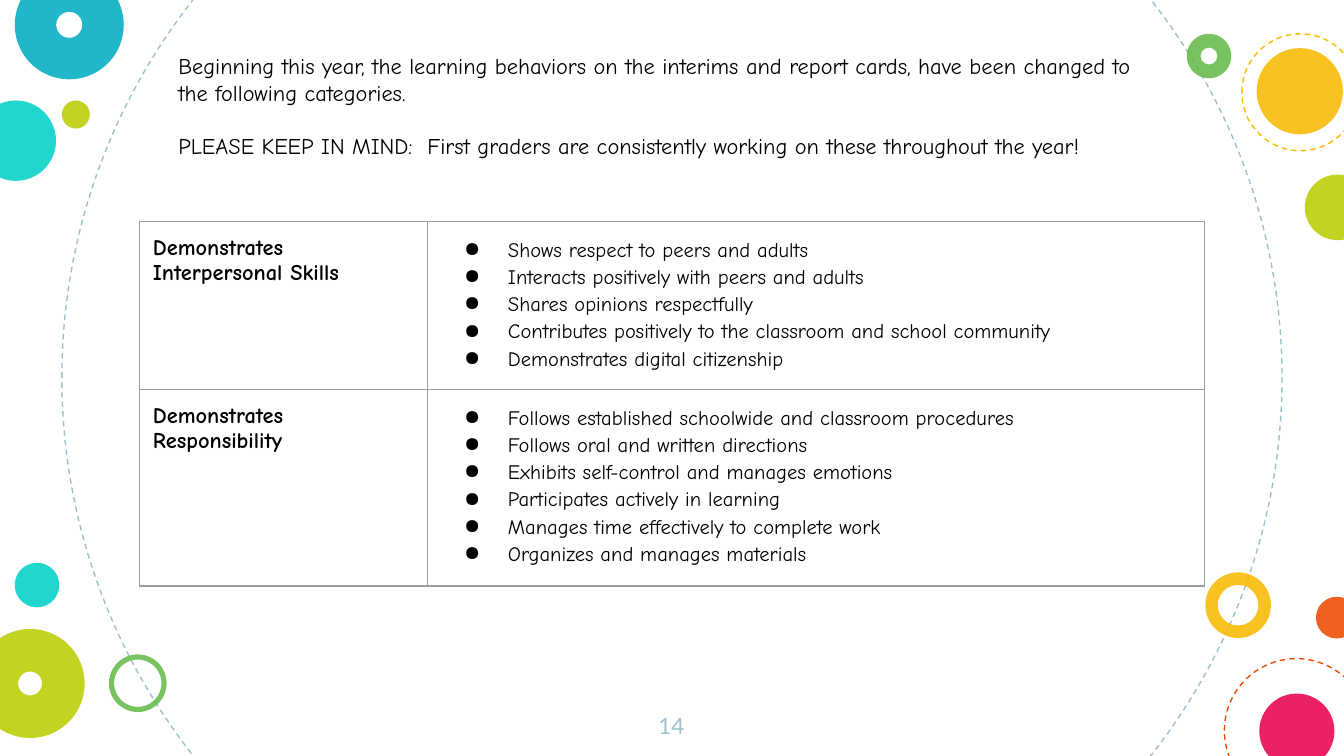
"""Builds the slide on first-grade learning behavior categories."""
from dataclasses import dataclass

from lxml.etree import SubElement
from pptx import Presentation
from pptx.dml.color import RGBColor as RGB
from pptx.enum.dml import MSO_LINE_DASH_STYLE as Dash
from pptx.enum.shapes import MSO_SHAPE as Shape
from pptx.enum.text import PP_ALIGN as Align
from pptx.oxml.ns import qn
from pptx.util import Cm, Pt


@dataclass(frozen=True)
class Theme:
    ink: str = "000000"
    mist: str = "A1BECC"
    border: str = "9E9E9E"
    turquoise: str = "00D1C6"
    amber: str = "F8BB00"
    blue: str = "00ACC3"
    lime: str = "BBCD00"
    orange: str = "ED4A00"
    green: str = "65BB48"
    pink: str = "E8004C"
    opacity: int = 87000
    body_font: str = "Comic Neue"
    number_font: str = "Lato"
    text_size: Pt = Pt(12)
    bullet_size: Pt = Pt(11)
    hairline: Pt = Pt(0.75)


theme = Theme()
inset = Cm(0.25)
margins = dict.fromkeys(("margin_left", "margin_right", "margin_top", "margin_bottom"), inset)
body = {"name": theme.body_font, "size": theme.text_size, "bold": False}
heading = body | {"bold": True}
bullet = body | {"size": theme.bullet_size}
numbering = {"name": theme.number_font, "size": theme.text_size}


def write(paragraph, text, look, color=theme.ink):
    run = paragraph.add_run()
    run.text = text
    for name, value in look.items():
        setattr(run.font, name, value)
    run.font.color.rgb = RGB.from_string(color)


def add_text_frame(left, top, width, height):
    frame = slide.shapes.add_textbox(Cm(left), Cm(top), Cm(width), Cm(height)).text_frame
    for name, value in (margins | {"word_wrap": True}).items():
        setattr(frame, name, value)
    return frame


deck = Presentation()
deck.slide_width, deck.slide_height = Cm(25.4), Cm(14.29)
slide = deck.slides.add_slide(deck.slide_layouts[6])

circles = [
    ("ring", 1.17, -4.39, 23.06, theme.mist, None),
    ("disc", -0.46, 1.9, 1.52, theme.turquoise, None),
    ("donut", 22.78, 10.82, 1.24, theme.amber, 0.19),
    ("donut", 0.28, -0.56, 2.06, theme.blue, 0.38),
    ("disc", 1.17, 1.9, 0.53, theme.lime, None),
    ("ring", 23.14, 12.45, 2.72, theme.orange, None),
    ("donut", 2.06, 12.37, 1.09, theme.green, 0.09),
    ("disc", 24.87, 11.28, 0.79, theme.orange, None),
    ("donut", -0.46, 11.89, 2.06, theme.lime, 0.39),
    ("disc", 23.8, 13.11, 1.42, theme.pink, None),
    ("donut", 22.43, 0.64, 0.84, theme.green, 0.31),
    ("disc", 23.75, 0.91, 1.63, theme.amber, None),
    ("disc", 24.66, 3.3, 1.24, theme.lime, None),
    ("ring", 23.47, 0.64, 2.21, theme.amber, None),
    ("disc", 0.28, 10.64, 0.84, theme.turquoise, None),
]
for kind, left, top, size, color, thickness in circles:
    preset = Shape.DONUT if kind == "donut" else Shape.OVAL
    circle = slide.shapes.add_shape(preset, Cm(left), Cm(top), Cm(size), Cm(size))
    circle.shadow.inherit = False
    if kind == "ring":
        circle.fill.background()
        circle.line.color.rgb = RGB.from_string(color)
        circle.line.width = theme.hairline
        circle.line.dash_style = Dash.DASH
        continue
    circle.fill.solid()
    circle.fill.fore_color.rgb = RGB.from_string(color)
    tint = circle.element.find(".//" + qn("a:srgbClr"))
    SubElement(tint, qn("a:alpha"), val=str(theme.opacity))
    circle.line.fill.background()
    if kind == "donut":
        circle.adjustments[0] = thickness

page_number = add_text_frame(12.04, 13.21, 1.3, 1.09).paragraphs[0]
page_number.alignment = Align.CENTER
write(page_number, "14", numbering, theme.mist)

intro = add_text_frame(3.12, 0.74, 19.15, 2.97)
write(
    intro.paragraphs[0],
    "Beginning this year, the learning behaviors on the interims and report cards, "
    "have been changed to the following categories.",
    body,
)
reminder = intro.add_paragraph()
reminder.space_before = Pt(14)
write(
    reminder,
    "PLEASE KEEP IN MIND:\u00a0 First graders are consistently working on these throughout the year!".replace("\u00a0", " "),
    body,
)

categories = {
    "Demonstrates Interpersonal Skills": [
        "Shows respect to peers and adults",
        "Interacts positively with peers and adults",
        "Shares opinions respectfully",
        "Contributes positively to the classroom and school community",
        "Demonstrates digital citizenship",
    ],
    "Demonstrates Responsibility": [
        "Follows established schoolwide and classroom procedures",
        "Follows oral and written directions",
        "Exhibits self-control and manages emotions",
        "Participates actively in learning",
        "Manages time effectively to complete work",
        "Organizes and manages materials",
    ],
}
column_widths = (5.44, 14.68)
row_heights = (3.08, 3.61)
behaviors = slide.shapes.add_table(
    len(categories), 2, Cm(2.64), Cm(4.19), Cm(sum(column_widths)), Cm(sum(row_heights))
).table
behaviors.first_row = behaviors.horz_banding = False
for column, width in zip(behaviors.columns, column_widths):
    column.width = Cm(width)
for row, height in zip(behaviors.rows, row_heights):
    row.height = Cm(height)

for cell in behaviors.iter_cells():
    for name, value in margins.items():
        setattr(cell, name, value)
    properties = cell._tc.get_or_add_tcPr()
    for side in ("lnL", "lnR", "lnT", "lnB"):
        edge = SubElement(properties, qn(f"a:{side}"), w=str(theme.hairline))
        SubElement(SubElement(edge, qn("a:solidFill")), qn("a:srgbClr"), val=theme.border)
    cell.fill.background()

for row, (category, skills) in zip(behaviors.rows, categories.items()):
    category_cell, skills_cell = row.cells
    write(category_cell.text_frame.paragraphs[0], category, heading)
    skill_list = skills_cell.text_frame
    for position, skill in enumerate(skills):
        item = skill_list.add_paragraph() if position else skill_list.paragraphs[0]
        layout = item._p.get_or_add_pPr()
        layout.set("marL", str(Cm(1.27)))
        layout.set("indent", str(Cm(-0.83)))
        SubElement(SubElement(layout, qn("a:buClr")), qn("a:srgbClr"), val=theme.ink)
        SubElement(layout, qn("a:buChar"), char="●")
        item.line_spacing = 1.15
        write(item, skill, bullet)

deck.save("out.pptx")
